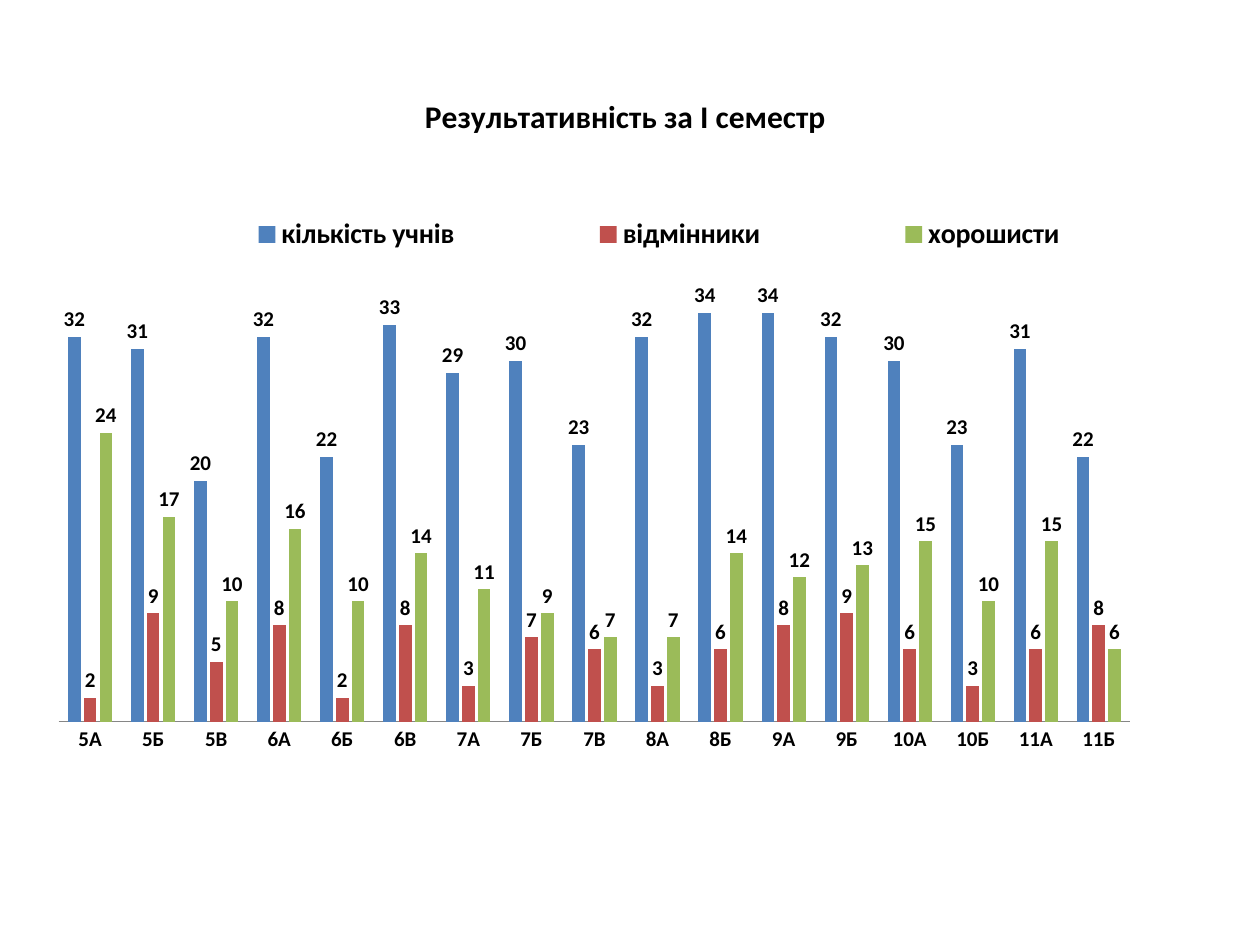
"""Build a slide with a clustered column chart of semester results by class."""
from dataclasses import dataclass
from typing import NamedTuple

from lxml import etree
from pptx import Presentation
from pptx import util as u
from pptx.chart.chart import Chart
from pptx.chart.data import CategoryChartData
from pptx.dml.color import RGBColor
from pptx.enum import chart as charts
from pptx.oxml import ns


@dataclass(frozen=True)
class Theme:
    font: str = "Calibri"
    text: RGBColor = RGBColor(0, 0, 0)
    axis: RGBColor = RGBColor(0x86, 0x86, 0x86)
    base_size: u.Length = u.Pt(10)
    label_size: u.Length = u.Pt(12)
    legend_size: u.Length = u.Pt(16)
    title_size: u.Length = u.Pt(18)


@dataclass(frozen=True)
class Series:
    name: str
    color: str
    values: tuple[int, ...]


class Layout(NamedTuple):
    x: float
    y: float
    w: float | None = None
    h: float | None = None


THEME = Theme()
TITLE = "Результативність за І семестр"
CLASSES = "5А 5Б 5В 6А 6Б 6В 7А 7Б 7В 8А 8Б 9А 9Б 10А 10Б 11А 11Б".split()
SERIES = (
    Series("кількість учнів", "4F81BD",
           (32, 31, 20, 32, 22, 33, 29, 30, 23, 32, 34, 34, 32, 30, 23, 31, 22)),
    Series("відмінники", "C0504D",
           (2, 9, 5, 8, 2, 8, 3, 7, 6, 3, 6, 8, 9, 6, 3, 6, 8)),
    Series("хорошисти", "9BBB59",
           (24, 17, 10, 16, 10, 14, 11, 9, 7, 7, 14, 12, 13, 15, 10, 15, 6)),
)


def style_font(font, size: u.Length, bold: bool = True) -> None:
    font.name = THEME.font
    font.size = size
    font.bold = bold
    font.color.rgb = THEME.text


def place(chart: Chart, part: str, index: int, layout: Layout) -> None:
    """Give a chart part a manual layout in fractions of the chart."""
    parent = chart._chartSpace.find(f".//{ns.qn(part)}")
    for old in parent.findall(ns.qn("c:layout")):
        parent.remove(old)
    element = etree.Element(ns.qn("c:layout"))
    manual = etree.SubElement(element, ns.qn("c:manualLayout"))
    settings = {"xMode": "edge", "yMode": "edge", **layout._asdict()}
    if part == "c:plotArea":
        settings = {"layoutTarget": "inner", **settings}
    for name, value in settings.items():
        if value is not None:
            etree.SubElement(manual, ns.qn(f"c:{name}")).set("val", str(value))
    parent.insert(index, element)


def add_title(chart: Chart) -> None:
    chart.has_title = True
    frame = chart.chart_title.text_frame
    frame.text = TITLE
    style_font(frame.paragraphs[0].font, THEME.title_size)
    place(chart, "c:title", 1, Layout(0.32, 0.04))


def add_legend(chart: Chart) -> None:
    chart.has_legend = True
    chart.legend.position = charts.XL_LEGEND_POSITION.RIGHT
    chart.legend.include_in_layout = False
    style_font(chart.legend.font, THEME.legend_size)
    place(chart, "c:legend", 1, Layout(0.06, 0.18, 0.94, 0.07))


def style_axes(chart: Chart) -> None:
    category = chart.category_axis
    category.major_tick_mark = charts.XL_TICK_MARK.NONE
    category.minor_tick_mark = charts.XL_TICK_MARK.NONE
    category.format.line.color.rgb = THEME.axis
    style_font(category.tick_labels.font, THEME.label_size)
    value = chart.value_axis
    value.minimum_scale, value.maximum_scale = 0, 40
    value.has_major_gridlines = False
    value.visible = False


def style_columns(chart: Chart) -> None:
    plot = chart.plots[0]
    plot.gap_width, plot.overlap = 150, -25
    plot.vary_by_categories = False
    for columns, source in zip(plot.series, SERIES):
        columns.format.fill.solid()
        columns.format.fill.fore_color.rgb = RGBColor.from_string(source.color)
        columns.invert_if_negative = False
        labels = columns.data_labels
        labels.show_value = True
        labels.position = charts.XL_LABEL_POSITION.OUTSIDE_END
        style_font(labels.font, THEME.label_size)
    place(chart, "c:plotArea", 0, Layout(0.004, 0.222, 0.939, 0.578))


def main() -> None:
    presentation = Presentation()
    presentation.slide_width, presentation.slide_height = u.Cm(25.4), u.Cm(19.05)
    slide = presentation.slides.add_slide(presentation.slide_layouts[6])
    data = CategoryChartData()
    data.categories = CLASSES
    for series in SERIES:
        data.add_series(series.name, series.values)
    chart = slide.shapes.add_chart(
        charts.XL_CHART_TYPE.COLUMN_CLUSTERED,
        u.Cm(1.09), u.Cm(1.12), u.Cm(23.01), u.Cm(16.79), data).chart
    style_font(chart.font, THEME.base_size, bold=False)
    add_title(chart)
    add_legend(chart)
    style_axes(chart)
    style_columns(chart)
    presentation.save("out.pptx")


if __name__ == "__main__":
    main()
